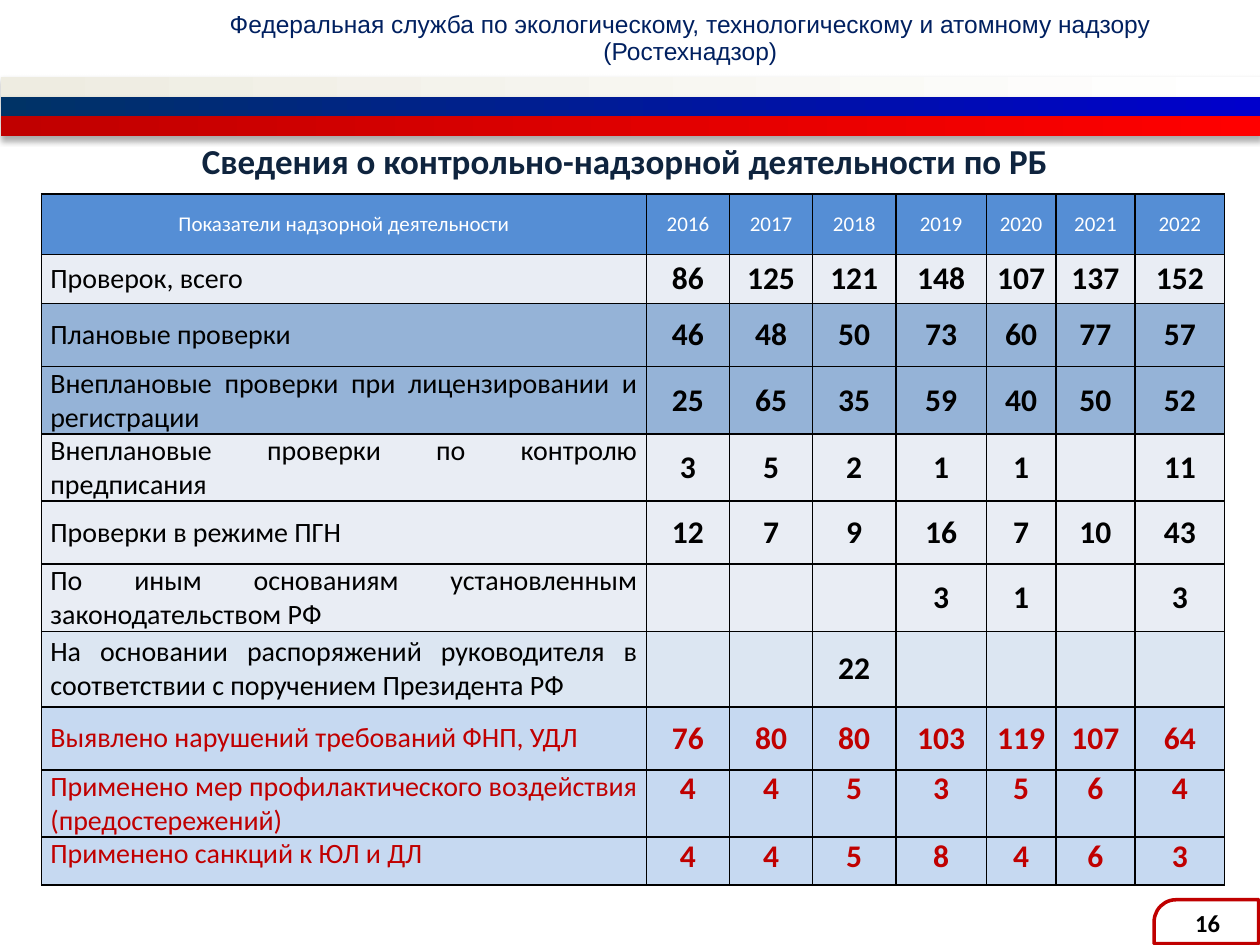
import pptx
import pptx.util
import pptx.dml.color
import pptx.oxml
import pptx.enum.shapes
import pptx.enum.text
from lxml import etree
from pptx.util import Inches

ALIGN = pptx.enum.text.PP_ALIGN
MIDDLE = pptx.enum.text.MSO_ANCHOR.MIDDLE
TOP = pptx.enum.text.MSO_ANCHOR.TOP
SHAPES = pptx.enum.shapes.MSO_SHAPE
DRAWING_NS = "http://schemas.openxmlformats.org/drawingml/2006/main"

AGENCY = [
    "Федеральная служба по экологическому, технологическому и атомному надзору",
    "(Ростехнадзор)",
]
TITLE = "Сведения о контрольно-надзорной деятельности по РБ"
PAGE_NUMBER = "16"
STRIPES = [("EEECE1", "FFFFFF"), ("003366", "0000CC"), ("C00000", "FF0000")]

HEADER = ["Показатели надзорной деятельности",
          "2016", "2017", "2018", "2019", "2020", "2021", "2022"]
COLUMN_WIDTHS = [4.8, 0.66, 0.66, 0.66, 0.72, 0.55, 0.63, 0.71]
HEADER_HEIGHT = 0.48
PALE, BLUE, LIGHT, SKY = "E9EDF4", "95B3D7", "DCE6F2", "C6D9F1"
BLACK, RED = "000000", "C00000"
INDICATORS = [
    ("Проверок, всего", "86 125 121 148 107 137 152", 0.39, PALE, BLACK, MIDDLE),
    ("Плановые проверки", "46 48 50 73 60 77 57", 0.5, BLUE, BLACK, MIDDLE),
    ("Внеплановые проверки при лицензировании и регистрации",
     "25 65 35 59 40 50 52", 0.5, BLUE, BLACK, MIDDLE),
    ("Внеплановые проверки по контролю предписания",
     "3 5 2 1 1 - 11", 0.5, PALE, BLACK, MIDDLE),
    ("Проверки в режиме ПГН", "12 7 9 16 7 10 43", 0.5, PALE, BLACK, MIDDLE),
    ("По иным основаниям установленным законодательством РФ",
     "- - - 3 1 - 3", 0.5, PALE, BLACK, MIDDLE),
    ("На основании распоряжений руководителя в соответствии с поручением Президента РФ",
     "- - 22 - - - -", 0.6, LIGHT, BLACK, MIDDLE),
    ("Выявлено нарушений требований ФНП, УДЛ",
     "76 80 80 103 119 107 64", 0.5, SKY, RED, MIDDLE),
    ("Применено мер профилактического воздействия (предостережений)",
     "4 4 5 3 5 6 4", 0.51, SKY, RED, TOP),
    ("Применено санкций к ЮЛ и ДЛ", "4 4 5 8 4 6 3", 0.38, SKY, RED, TOP),
]


def rgb(value):
    return pptx.dml.color.RGBColor.from_string(value)


def write(paragraph, text, size, color, bold=False, font="Calibri", align=ALIGN.CENTER):
    paragraph.alignment = align
    run = paragraph.add_run()
    run.text = text
    run.font.size = pptx.util.Pt(size)
    run.font.name = font
    run.font.bold = bold
    run.font.color.rgb = rgb(color)


def add_text_frame(slide, left, top, width, height, anchor=MIDDLE):
    frame = slide.shapes.add_textbox(
        Inches(left), Inches(top), Inches(width), Inches(height)).text_frame
    frame.word_wrap = True
    frame.vertical_anchor = anchor
    return frame


def add_agency(slide):
    frame = add_text_frame(slide, 0.98, 0.1, 9, 0.43, TOP)
    frame.margin_top = frame.margin_bottom = 0
    for index, line in enumerate(AGENCY):
        paragraph = frame.add_paragraph() if index else frame.paragraphs[0]
        paragraph.line_spacing = pptx.util.Pt(15)
        write(paragraph, line, 14, "002060", font="Arial")


def add_stripe(slide, index, colors):
    stripe = slide.shapes.add_shape(
        SHAPES.RECTANGLE, Inches(0.01), Inches(0.61 + index * 0.157), Inches(9.99), Inches(0.16))
    stripe.line.fill.background()
    stripe.fill.gradient()
    stripe.fill.gradient_angle = 0
    for stop, color in zip(stripe.fill.gradient_stops, colors):
        stop.color.rgb = rgb(color)
    stripe.shadow.inherit = False
    effects = stripe.element.spPr.find(f"{{{DRAWING_NS}}}effectLst")
    effects.append(pptx.oxml.parse_xml(
        f'<a:outerShdw xmlns:a="{DRAWING_NS}" blurRad="44450" dist="27940" dir="5400000" '
        'algn="ctr"><a:srgbClr val="000000"><a:alpha val="32000"/></a:srgbClr></a:outerShdw>'))


def add_page_frame(slide):
    corner = slide.shapes.add_shape(
        SHAPES.ROUND_1_RECTANGLE, Inches(9.4), Inches(6.9), Inches(0.35), Inches(0.83))
    corner.rotation = 270
    corner.adjustments[0] = 0.5
    corner.fill.background()
    corner.line.color.rgb = rgb(RED)
    corner.line.width = pptx.util.Pt(2)
    corner.shadow.inherit = False


def style_cell(cell, fill, anchor):
    cell.margin_left = cell.margin_right = Inches(0.07)
    cell.margin_top = cell.margin_bottom = 0
    cell.vertical_anchor = anchor
    properties = cell._tc.get_or_add_tcPr()
    for side in ("lnL", "lnR", "lnT", "lnB"):
        border = etree.SubElement(properties, f"{{{DRAWING_NS}}}{side}", w="12700")
        solid = etree.SubElement(border, f"{{{DRAWING_NS}}}solidFill")
        etree.SubElement(solid, f"{{{DRAWING_NS}}}srgbClr", val=BLACK)
    cell.fill.solid()
    cell.fill.fore_color.rgb = rgb(fill)


def add_indicators(slide):
    heights = [HEADER_HEIGHT] + [indicator[2] for indicator in INDICATORS]
    table = slide.shapes.add_table(
        len(heights), len(COLUMN_WIDTHS), Inches(0.33), Inches(1.54),
        Inches(sum(COLUMN_WIDTHS)), Inches(sum(heights))).table
    for column, width in zip(table.columns, COLUMN_WIDTHS):
        column.width = Inches(width)
    for row, height in zip(table.rows, heights):
        row.height = Inches(height)
    for cell, heading in zip(table.rows[0].cells, HEADER):
        style_cell(cell, "558ED5", MIDDLE)
        write(cell.text_frame.paragraphs[0], heading, 12, "FFFFFF")
    for row_index, (label, counts, _, fill, color, anchor) in enumerate(INDICATORS, 1):
        for column_index, text in enumerate([label] + counts.split()):
            cell = table.cell(row_index, column_index)
            style_cell(cell, fill, anchor)
            paragraph = cell.text_frame.paragraphs[0]
            if column_index == 0:
                write(paragraph, text, 16, color, align=ALIGN.JUSTIFY)
            elif text != "-":
                write(paragraph, text, 18, color, bold=True)


def main():
    deck = pptx.Presentation()
    deck.slide_width, deck.slide_height = Inches(10), Inches(7.5)
    slide = deck.slides.add_slide(deck.slide_layouts[6])
    add_agency(slide)
    for index, colors in enumerate(STRIPES):
        add_stripe(slide, index, colors)
    add_page_frame(slide)
    add_indicators(slide)
    title = add_text_frame(slide, 0, 1, 9.92, 0.54)
    write(title.paragraphs[0], TITLE, 20, "0F243E", bold=True)
    page = add_text_frame(slide, 9.17, 7.14, 0.83, 0.36)
    write(page.paragraphs[0], PAGE_NUMBER, 14, BLACK, bold=True)
    deck.save("out.pptx")


if __name__ == "__main__":
    main()
